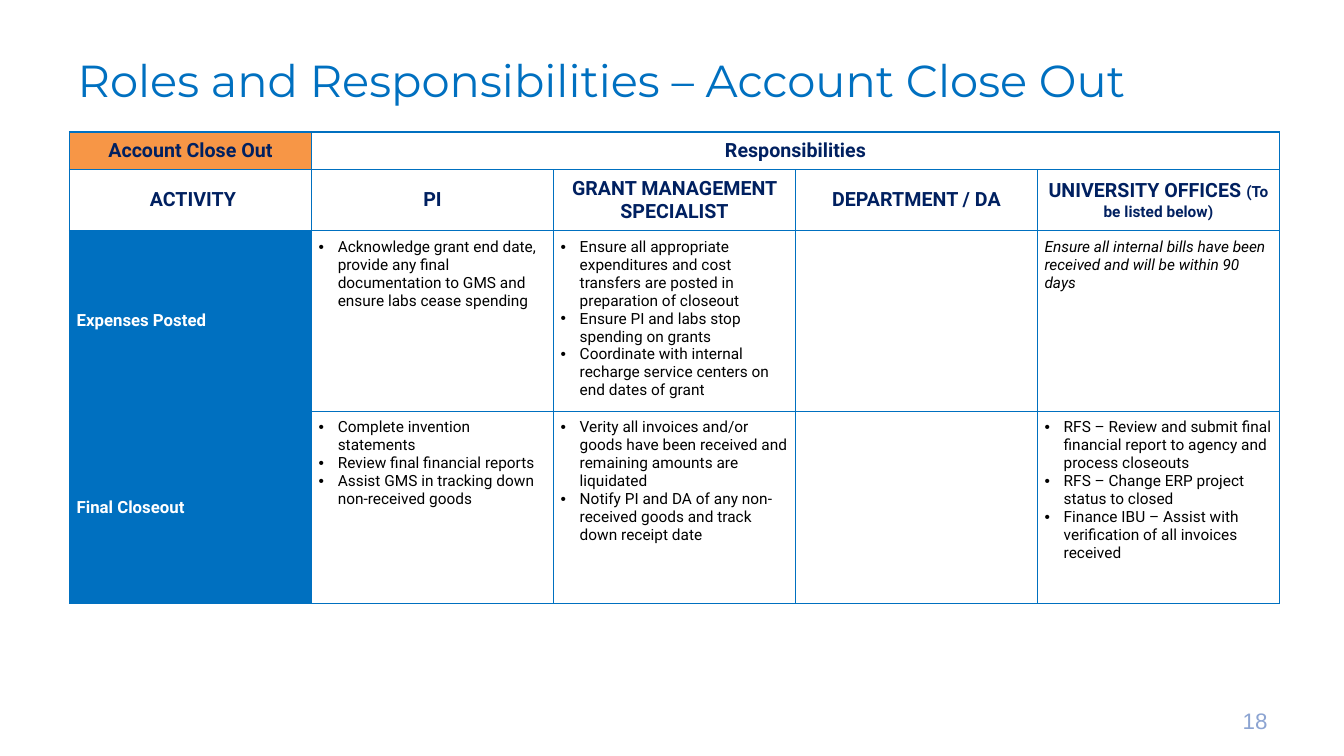
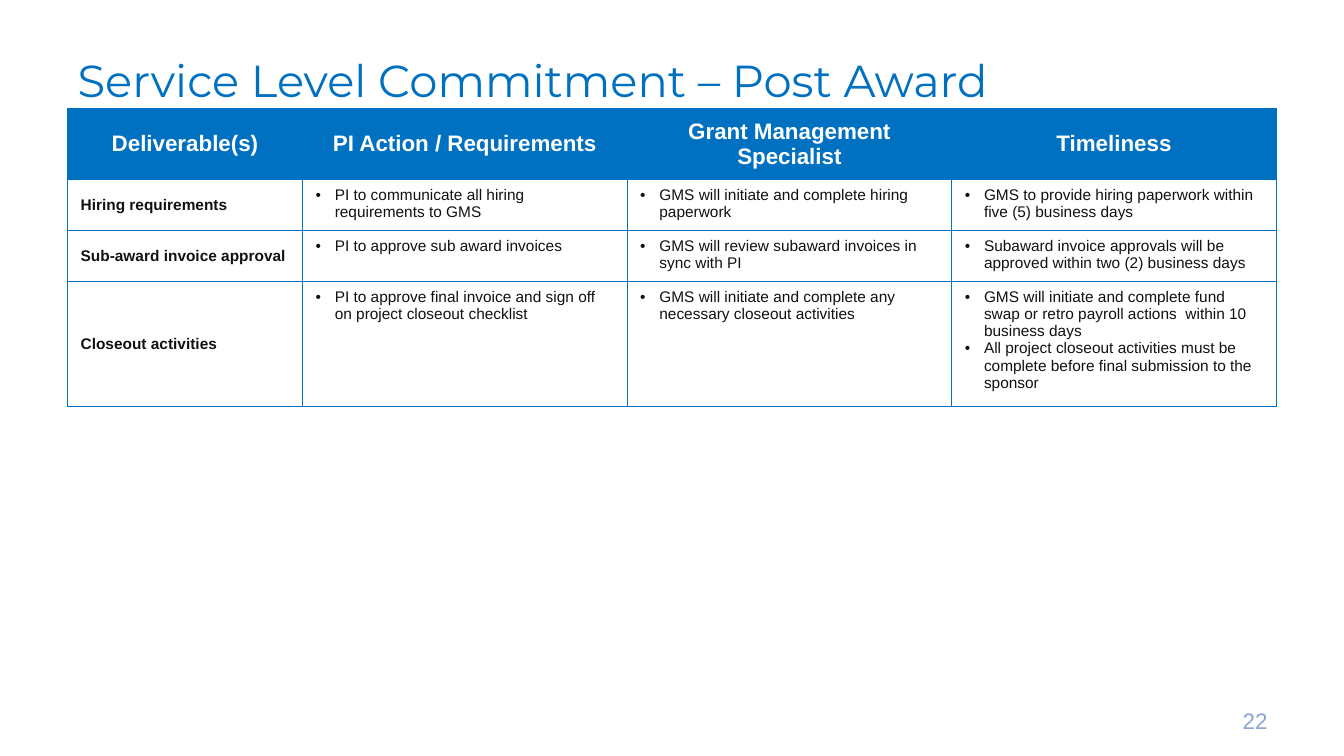
import pptx
import pptx.util
import pptx.dml.color
import pptx.enum.text
import pptx.oxml
import pptx.oxml.ns

Inches, Pt = pptx.util.Inches, pptx.util.Pt
RGBColor = pptx.dml.color.RGBColor
ALIGN, ANCHOR = pptx.enum.text.PP_ALIGN, pptx.enum.text.MSO_ANCHOR

BLUE = RGBColor(0x00, 0x70, 0xC0)
NAVY = RGBColor(0x00, 0x20, 0x60)
ORANGE = RGBColor(0xF7, 0x96, 0x46)
PALE_BLUE = RGBColor(0x8C, 0xA4, 0xD2)
INK = RGBColor(0x10, 0x11, 0x12)
BLACK = RGBColor(0, 0, 0)
WHITE = RGBColor(255, 255, 255)

WIDTH, HEIGHT = 13.33, 7.5
RIGHT_EDGE = 12.67
BULLET_INDENT = 0.19

# In body rows the first cell is a label, a list is bulleted, a string is an italic note.
SLIDES = [
    {
        "title": "Roles and Responsibilities – Account Close Out",
        "number": "18",
        "left": 0.69, "top": 1.31, "side_inset": 0.07,
        "columns": [2.4] * 5,
        "rows": [0.37, 0.6, 1.74, 1.91],
        "headers": [
            ["Account Close Out", "Responsibilities", "", "", ""],
            ["\u00a0ACTIVITY", "PI", "GRANT MANAGEMENT SPECIALIST", "DEPARTMENT / DA",
             ("UNIVERSITY OFFICES ", "(To be listed below)")],
        ],
        "body": [
            ["Expenses Posted",
             ["Acknowledge grant end date, provide any final documentation to GMS "
              "and ensure labs cease spending"],
             ["Ensure all appropriate expenditures and cost transfers are posted in "
              "preparation of closeout",
              "Ensure PI and labs stop spending on grants",
              "Coordinate with internal recharge service centers on end dates of grant"],
             [],
             "Ensure all internal bills have been received and will be within 90 days"],
            ["Final Closeout",
             ["Complete invention statements",
              "Review final financial reports",
              "Assist GMS in tracking down non-received goods"],
             ["Verity all invoices and/or goods have been received and remaining amounts "
              "are liquidated",
              "Notify PI and DA of any non-received goods and track down receipt date"],
             [],
             ["RFS – Review and submit final financial report to agency and process closeouts",
              "RFS – Change ERP project status to closed",
              "Finance IBU – Assist with verification of all invoices received"]],
        ],
        "merge": [(0, 1, 0, 4)],
        "fills": {(0, 0): ORANGE},
        "header_fill": WHITE, "label_fill": BLUE,
        "header_font": {"name": "Roboto", "size": Pt(14), "bold": True, "color": NAVY},
        "label_font": {"name": "Roboto", "size": Pt(12), "bold": True, "color": WHITE},
        "body_font": {"name": "Roboto", "size": Pt(11), "color": BLACK},
    },
    {
        "title": "Service Level Commitment – Post Award",
        "number": "22",
        "left": 0.67, "top": 1.08, "side_inset": 0.13,
        "columns": [2.33] + [3.22] * 3,
        "rows": [0.7, 0.49, 0.49, 1.2],
        "headers": [
            ["Deliverable(s)", "PI Action / Requirements", "Grant Management Specialist",
             "Timeliness"],
        ],
        "body": [
            ["Hiring requirements",
             ["PI to communicate all hiring requirements to GMS"],
             ["GMS will initiate and complete hiring paperwork"],
             ["GMS to provide hiring paperwork within five (5) business days"]],
            ["Sub-award invoice approval",
             ["PI to approve sub award invoices"],
             ["GMS will review subaward invoices in sync with PI"],
             ["Subaward invoice approvals will be approved within two (2) business days"]],
            ["Closeout activities",
             ["PI to approve final invoice and sign off on project closeout checklist"],
             ["GMS will initiate and complete any necessary closeout activities"],
             ["GMS will initiate and complete fund swap or retro payroll actions  within 10 "
              "business days",
              "All project closeout activities must be complete before final submission to "
              "the sponsor"]],
        ],
        "merge": [],
        "fills": {},
        "header_fill": BLUE, "label_fill": WHITE,
        "header_font": {"name": "Arial", "size": Pt(16), "bold": True, "color": WHITE},
        "label_font": {"name": "Arial", "size": Pt(11), "bold": True, "color": INK},
        "body_font": {"name": "Arial", "size": Pt(11), "color": INK},
    },
]

TITLE_FONT = {"name": "Montserrat", "size": Pt(32), "color": BLUE}
NUMBER_FONT = {"name": "Arial", "size": Pt(16), "color": PALE_BLUE}
ASIDE_SIZE = Pt(11)


def add_run(p, text, font):
    r = p.add_run()
    r.text = text
    for key, value in font.items():
        if key == "color":
            r.font.color.rgb = value
        else:
            setattr(r.font, key, value)


def place(shape, left, top, width, height):
    box = {"left": left, "top": top, "width": width, "height": height}
    for key, value in box.items():
        setattr(shape, key, Inches(value))


def add_bullet(p):
    pPr = p._p.get_or_add_pPr()
    pPr.set("marL", str(Inches(BULLET_INDENT)))
    pPr.set("indent", str(-Inches(BULLET_INDENT)))
    ns = pptx.oxml.ns.nsdecls("a")
    pPr.append(pptx.oxml.parse_xml(f'<a:buFont {ns} typeface="Arial"/>'))
    pPr.append(pptx.oxml.parse_xml(f'<a:buChar {ns} char="•"/>'))


def style_cell(cell, fill, side_inset):
    """Give the cell its blue borders, fill and margins."""
    tcPr = cell._tc.get_or_add_tcPr()
    ns = pptx.oxml.ns.nsdecls("a")
    for side in "LRTB":
        tcPr.append(pptx.oxml.parse_xml(
            f'<a:ln{side} {ns} w="{Pt(1)}"><a:solidFill><a:srgbClr val="{BLUE}"/>'
            f'</a:solidFill></a:ln{side}>'))
    cell.fill.solid()
    cell.fill.fore_color.rgb = fill
    cell.margin_left = cell.margin_right = Inches(side_inset)
    cell.margin_top = cell.margin_bottom = Inches(0.07)


def write_header(cell, text, font):
    """Write a centred header; a pair is a heading and its smaller aside."""
    cell.vertical_anchor = ANCHOR.MIDDLE
    p = cell.text_frame.paragraphs[0]
    p.alignment = ALIGN.CENTER
    heading, aside = text if isinstance(text, tuple) else (text, "")
    add_run(p, heading, font)
    if aside:
        add_run(p, aside, {**font, "size": ASIDE_SIZE})


def write_body(cell, content, font):
    tf = cell.text_frame
    if isinstance(content, str):
        add_run(tf.paragraphs[0], content, {**font, "italic": True})
        return
    for i, item in enumerate(content):
        p = tf.add_paragraph() if i else tf.paragraphs[0]
        add_bullet(p)
        add_run(p, item, font)


def add_grid(s, data):
    columns, rows = data["columns"], data["rows"]
    table = s.shapes.add_table(
        len(rows), len(columns), Inches(data["left"]), Inches(data["top"]),
        Inches(sum(columns)), Inches(sum(rows))).table
    table.first_row = table.horz_banding = False
    for column, width in zip(table.columns, columns):
        column.width = Inches(width)
    for row, height in zip(table.rows, rows):
        row.height = Inches(height)

    header_count = len(data["headers"])
    for i, contents in enumerate(data["headers"] + data["body"]):
        for j, content in enumerate(contents):
            cell = table.cell(i, j)
            is_header, is_label = i < header_count, j == 0
            fill = (data["header_fill"] if is_header
                    else data["label_fill"] if is_label else WHITE)
            style_cell(cell, data["fills"].get((i, j), fill), data["side_inset"])
            if not content:
                continue
            if is_header:
                write_header(cell, content, data["header_font"])
            elif is_label:
                cell.vertical_anchor = ANCHOR.MIDDLE
                add_run(cell.text_frame.paragraphs[0], content, data["label_font"])
            else:
                write_body(cell, content, data["body_font"])
    for top, left, bottom, right in data["merge"]:
        table.cell(top, left).merge(table.cell(bottom, right))


def add_title(s, text):
    place(s.shapes.title, 0.67, 0.35, 13.13 - 0.67, 0.73)
    tf = s.shapes.title.text_frame
    tf.auto_size = pptx.enum.text.MSO_AUTO_SIZE.NONE
    tf.vertical_anchor = ANCHOR.TOP
    p = tf.paragraphs[0]
    p.alignment = ALIGN.LEFT
    p.line_spacing = Pt(47.2)
    add_run(p, text, TITLE_FONT)


def add_number(s, text):
    width = 3.11
    tf = s.shapes.add_textbox(Inches(RIGHT_EDGE - width), Inches(6.95),
                              Inches(width), Inches(0.4)).text_frame
    tf.word_wrap = True
    tf.vertical_anchor = ANCHOR.MIDDLE
    p = tf.paragraphs[0]
    p.alignment = ALIGN.RIGHT
    add_run(p, text, NUMBER_FONT)


def main():
    prs = pptx.Presentation()
    prs.slide_width, prs.slide_height = Inches(WIDTH), Inches(HEIGHT)
    for data in SLIDES:
        s = prs.slides.add_slide(prs.slide_layouts[5])
        add_title(s, data["title"])
        add_number(s, data["number"])
        add_grid(s, data)
    prs.save("out.pptx")


if __name__ == "__main__":
    main()
